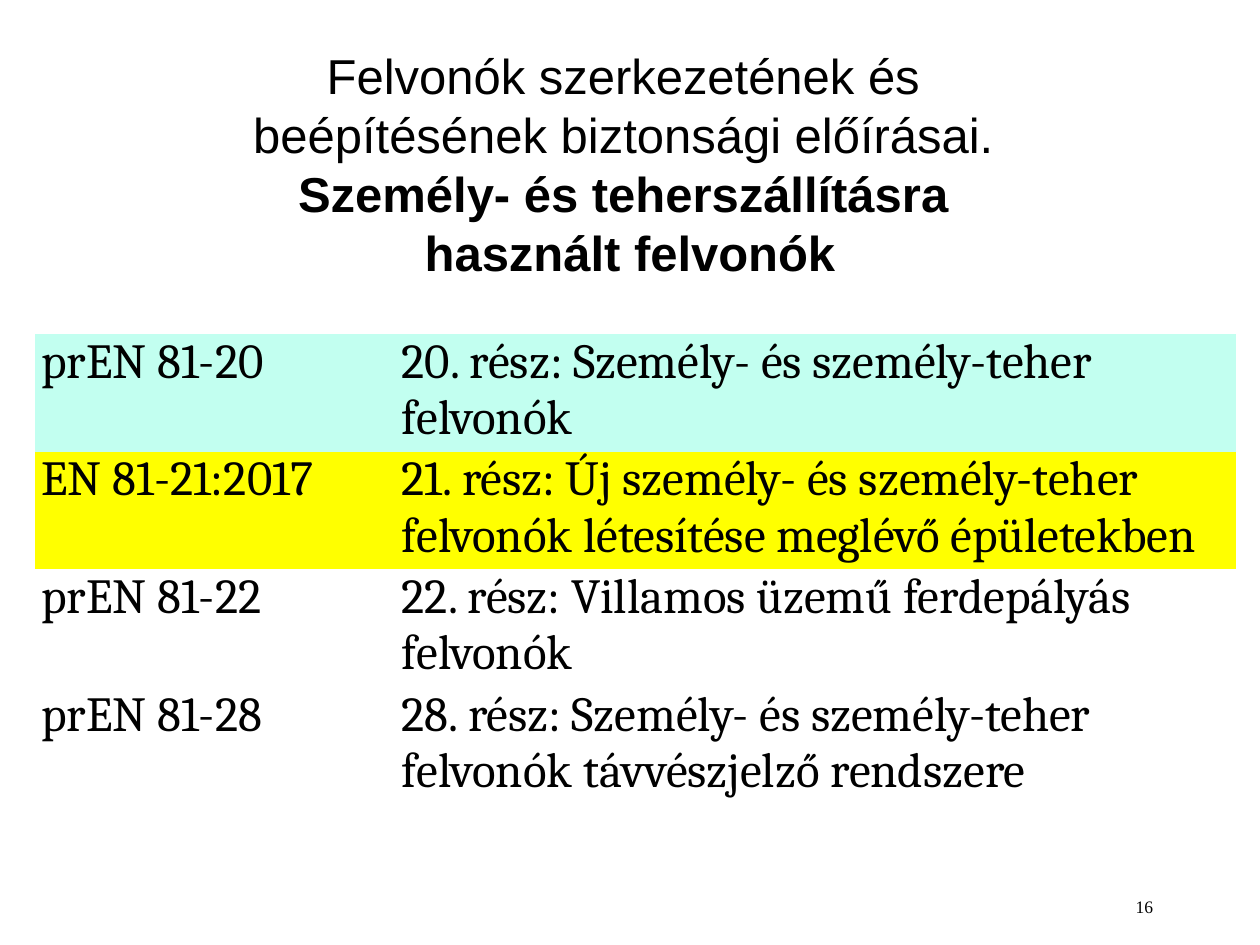
from pptx import Presentation
from pptx.dml.color import RGBColor
from pptx.enum.text import MSO_ANCHOR, PP_ALIGN
from pptx.oxml.ns import qn
from pptx.util import Inches, Pt

CENTER, RIGHT = PP_ALIGN.CENTER, PP_ALIGN.RIGHT
TOP, MIDDLE = MSO_ANCHOR.TOP, MSO_ANCHOR.MIDDLE
PLAIN_TABLE_STYLE = "{2D5ABB26-0587-4C30-8999-92F81FD0307C}"

TITLE_RUNS = [
    ("Felvonók szerkezetének és \vbeépítésének biztonsági előírásai. \v", False),
    ("Személy- és teherszállításra \vhasznált felvonók", True),
]
PAGE_NUMBER = "16"
STANDARDS = [
    ("prEN 81-20", "20. rész: Személy- és személy-teher felvonók", "C2FFF0"),
    ("EN 81-21:2017",
     "21. rész: Új személy- és személy-teher felvonók létesítése meglévő épületekben",
     "FFFF00"),
    ("prEN 81-22", "22. rész: Villamos üzemű ferdepályás felvonók", None),
    ("prEN 81-28",
     "28. rész: Személy- és személy-teher felvonók távvészjelző rendszere", None),
]
COLUMN_WIDTHS = [2.86, 6.67]
ROW_HEIGHT = 0.89


def color(value):
    return RGBColor.from_string(value)


def add_run(paragraph, text, font, size, bold=False):
    for index, line in enumerate(text.split("\v")):
        if index:
            paragraph.add_line_break()
        if line:
            run = paragraph.add_run()
            run.text = line
            run.font.name = font
            run.font.size = Pt(size)
            run.font.bold = bold
            run.font.color.rgb = color("000000")


def add_text(slide, position, runs, font, size, alignment, anchor):
    frame = slide.shapes.add_textbox(*map(Inches, position)).text_frame
    frame.word_wrap = True
    frame.vertical_anchor = anchor
    paragraph = frame.paragraphs[0]
    paragraph.alignment = alignment
    for text, bold in runs:
        add_run(paragraph, text, font, size, bold)


def add_standards_table(slide):
    table = slide.shapes.add_table(
        len(STANDARDS), len(COLUMN_WIDTHS), Inches(0.28), Inches(2.65),
        Inches(sum(COLUMN_WIDTHS)), Inches(ROW_HEIGHT * len(STANDARDS))).table
    table.first_row = False
    table.horz_banding = False
    table._tbl.tblPr.find(qn("a:tableStyleId")).text = PLAIN_TABLE_STYLE
    for column, width in zip(table.columns, COLUMN_WIDTHS):
        column.width = Inches(width)
    for row, (*texts, fill) in zip(table.rows, STANDARDS):
        row.height = Inches(ROW_HEIGHT)
        for cell, text in zip(row.cells, texts):
            cell.margin_left = cell.margin_right = Inches(0.05)
            cell.margin_top = cell.margin_bottom = 0
            if fill:
                cell.fill.solid()
                cell.fill.fore_color.rgb = color(fill)
            else:
                cell.fill.background()
            add_run(cell.text_frame.paragraphs[0], text, "Cambria", 28)


def main():
    presentation = Presentation()
    presentation.slide_width = Inches(10)
    presentation.slide_height = Inches(7.5)
    slide = presentation.slides.add_slide(presentation.slide_layouts[6])
    add_text(slide, (0.75, 0.67, 8.5, 1.25), TITLE_RUNS, "Arial", 28, CENTER, MIDDLE)
    add_text(slide, (7.17, 7.06, 2.08, 0.28), [(PAGE_NUMBER, False)],
             "Times New Roman", 10, RIGHT, TOP)
    add_standards_table(slide)
    presentation.save("out.pptx")


if __name__ == "__main__":
    main()
